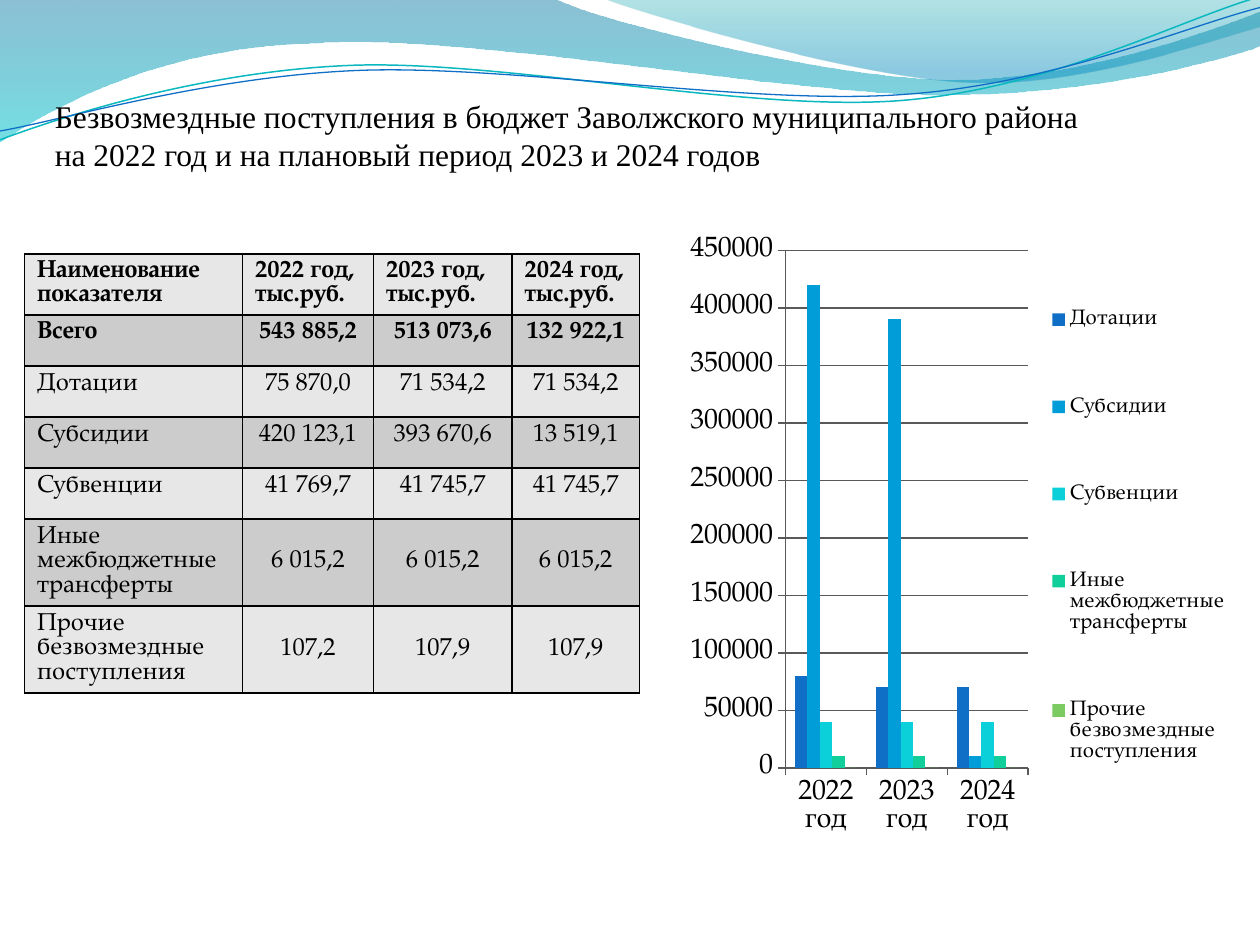
from dataclasses import dataclass
from typing import NamedTuple

from lxml.etree import SubElement
from pptx import Presentation
from pptx.chart.data import CategoryChartData
from pptx.dml.color import RGBColor
from pptx.enum.chart import XL_CHART_TYPE, XL_LEGEND_POSITION, XL_TICK_MARK
from pptx.enum.text import MSO_ANCHOR, MSO_AUTO_SIZE, PP_ALIGN
from pptx.oxml.ns import qn
from pptx.util import Inches, Pt


@dataclass(frozen=True)
class Theme:
    title_font: str = "Times New Roman"
    body_font: str = "TeX Gyre Pagella"
    ink: str = "000000"
    grid: str = "595959"
    bands: tuple = ("E7E7E7", "CCCCCC")
    series: tuple = ("0F6FC6", "009DD9", "0BD0D9", "10CF9B", "7CCA62")
    title_size: int = 18
    cell_size: int = 14
    axis_size: int = 16
    legend_size: int = 12


class Area(NamedTuple):
    left: float
    top: float
    width: float
    height: float


class Stop(NamedTuple):
    position: float
    color: str
    opacity: int


class Wave(NamedTuple):
    start: tuple
    segments: tuple
    stops: tuple = ()
    line: str = ""
    weight: float = 0


class Entry(NamedTuple):
    name: str
    amounts: tuple
    height: float = 4.05
    anchor: MSO_ANCHOR = MSO_ANCHOR.TOP


THEME = Theme()
GRID_COLUMNS, GRID_ROWS = 100, 75
TITLE = ("Безвозмездные поступления в бюджет Заволжского муниципального района",
         "на 2022 год и на плановый период 2023 и 2024 годов")
TITLE_AREA = Area(4.35, 4.4, 89.9, 9.3)
TABLE_AREA = Area(1.95, 20.15, 48.8, 40.2)
CHART_AREA = Area(53.9, 17.8, 44.2, 49.5)
LEGEND_SHARES = Area(0.65, 0.03, 0.35, 0.94)
TABLE_COLUMNS = (17.3, 10.4, 11, 10.1)
HEADER_HEIGHT = 4.85
YEARS = ("2022 год", "2023 год", "2024 год")
HEADER = ("Наименование показателя", "2022 год,\nтыс.руб.",
          "2023 год, тыс.руб.", "2024 год,\nтыс.руб.")
TOTAL = Entry("Всего", (543885.2, 513073.6, 132922.1))
ENTRIES = (
    Entry("Дотации", (75870.0, 71534.2, 71534.2)),
    Entry("Субсидии", (420123.1, 393670.6, 13519.1)),
    Entry("Субвенции", (41769.7, 41745.7, 41745.7)),
    Entry("Иные межбюджетные трансферты", (6015.2, 6015.2, 6015.2), 6.9, MSO_ANCHOR.MIDDLE),
    Entry("Прочие безвозмездные поступления", (107.2, 107.9, 107.9), 6.9, MSO_ANCHOR.MIDDLE),
)
WAVES = (
    Wave((0, 0), (
        (44, -0.1), (47.6, 1.7, 66.4, 6.3, 75.8, 6.3), (85.3, 6.3, 95.8, 2.6, 100, 0.9),
        (100.1, 3.6), (98.3, 4.4, 87, 7.6, 74.6, 7.5), (62.2, 7.5, 38.2, 2.8, 25.7, 3.4),
        (12.9, 3.6, 4.6, 8.3, -0.1, 11.3)),
        (Stop(0, "0074A1", 45), Stop(1, "00C6CF", 55))),
    Wave((47.9, -0.1), (
        (50.9, 1.1, 68.2, 6.2, 76.9, 6.5), (85.6, 6.9, 96.1, 3.2, 100, 2.1), (100, 0)),
        (Stop(0, "00A1A9", 30), Stop(0.8, "008BBF", 45))),
    Wave((0, 11.1), (
        (4.8, 9.3, 15.8, 5.7, 27.7, 5.2), (39.5, 4.7, 59.3, 8.9, 71.3, 8),
        (83.3, 7.1, 93.8, 1.5, 99.8, -0.2)), line="0AB8BF", weight=0.85),
    Wave((0, 10.4), (
        (4.7, 9.6, 16.4, 6.1, 28.3, 5.6), (40.3, 5.1, 59.7, 8.4, 71.7, 7.5),
        (83.6, 6.7, 94.1, 2.1, 100, 0.6)), line="0F6FC6", weight=0.75),
)


def units(count: float) -> int:
    return Inches(count * 10 / GRID_COLUMNS)


def frame(area: Area) -> tuple:
    return tuple(units(value) for value in area)


def rgb(color: str) -> RGBColor:
    return RGBColor.from_string(color)


def style_font(font, name: str, size: float, bold: bool = False) -> None:
    font.name, font.size, font.bold = name, Pt(size), bold
    font.color.rgb = rgb(THEME.ink)


def bend_segments(shape, segments: tuple) -> None:
    corners = iter(list(shape.element.iter(qn("a:lnTo"))))
    for segment in segments:
        first, *others = [next(corners) for _ in segment[::2]]
        if others:
            first.tag = qn("a:cubicBezTo")
        for other in others:
            first.append(other[0])
            other.getparent().remove(other)


def draw_wave(page, wave: Wave) -> None:
    points = [(units(x), units(y)) for segment in wave.segments
              for x, y in zip(segment[::2], segment[1::2])]
    builder = page.shapes.build_freeform(*(units(value) for value in wave.start))
    builder.add_line_segments(points, close=bool(wave.stops))
    shape = builder.convert_to_shape()
    bend_segments(shape, wave.segments)
    shape.shadow.inherit = False
    if not wave.stops:
        shape.fill.background()
        shape.line.color.rgb = rgb(wave.line)
        shape.line.width = Pt(wave.weight)
        return
    shape.line.fill.background()
    shape.fill.gradient()
    shape.fill.gradient_angle = 270
    for target, stop in zip(shape.fill.gradient_stops, wave.stops):
        target.position = stop.position
        target.color.rgb = rgb(stop.color)
    for color, stop in zip(shape.element.iter(qn("a:srgbClr")), wave.stops):
        SubElement(color, qn("a:alpha"), val=str(stop.opacity * 1000))


def draw_title(page) -> None:
    title = page.shapes.title
    title.element.getparent().append(title.element)
    title.left, title.top, title.width, title.height = frame(TITLE_AREA)
    box = title.text_frame
    box.word_wrap, box.auto_size = True, MSO_AUTO_SIZE.NONE
    box.vertical_anchor = MSO_ANCHOR.BOTTOM
    box.margin_left = box.margin_right = box.margin_bottom = 0
    para = box.paragraphs[0]
    para.alignment = PP_ALIGN.LEFT
    for index, words in enumerate(TITLE):
        if index:
            para.add_line_break()
        span = para.add_run()
        span.text = words
        style_font(span.font, THEME.title_font, THEME.title_size)


def fill_cell(cell, text: str, band: str, bold: bool, align: PP_ALIGN, anchor: MSO_ANCHOR) -> None:
    cell.fill.solid()
    cell.fill.fore_color.rgb = rgb(band)
    cell.vertical_anchor = anchor
    box = cell.text_frame
    for index, words in enumerate(text.split("\n")):
        para = box.add_paragraph() if index else box.paragraphs[0]
        para.alignment = align
        span = para.add_run()
        span.text = words
        style_font(span.font, THEME.body_font, THEME.cell_size, bold)
    properties = cell._tc.get_or_add_tcPr()
    for index, side in enumerate(("lnL", "lnR", "lnT", "lnB")):
        border = properties.makeelement(qn(f"a:{side}"), {"w": str(Pt(1))})
        solid = SubElement(border, qn("a:solidFill"))
        SubElement(solid, qn("a:srgbClr"), val=THEME.ink)
        properties.insert(index, border)


def draw_table(page) -> None:
    entries = (TOTAL,) + ENTRIES
    table = page.shapes.add_table(len(entries) + 1, len(HEADER), *frame(TABLE_AREA)).table
    for column, width in zip(table.columns, TABLE_COLUMNS):
        column.width = units(width)
    table.rows[0].height = units(HEADER_HEIGHT)
    for index, text in enumerate(HEADER):
        fill_cell(table.cell(0, index), text, THEME.bands[0], True, PP_ALIGN.LEFT, MSO_ANCHOR.TOP)
    for row, entry in enumerate(entries, 1):
        table.rows[row].height = units(entry.height)
        amounts = [f"{amount:,.1f}".replace(",", " ").replace(".", ",") for amount in entry.amounts]
        for index, text in enumerate([entry.name] + amounts):
            fill_cell(table.cell(row, index), text, THEME.bands[row % 2], entry is TOTAL,
                      PP_ALIGN.CENTER if index else PP_ALIGN.LEFT,
                      entry.anchor if index else MSO_ANCHOR.TOP)


def place_legend(legend) -> None:
    layout = legend._element.get_or_add_layout()
    manual = SubElement(layout, qn("c:manualLayout"))
    for mode in ("xMode", "yMode"):
        SubElement(manual, qn(f"c:{mode}"), val="edge")
    for key, share in zip("xywh", LEGEND_SHARES):
        SubElement(manual, qn(f"c:{key}"), val=str(share))


def draw_chart(page) -> None:
    data = CategoryChartData()
    data.categories = YEARS
    for entry in ENTRIES:
        data.add_series(entry.name, [round(amount, -4) for amount in entry.amounts])
    chart = page.shapes.add_chart(XL_CHART_TYPE.COLUMN_CLUSTERED, *frame(CHART_AREA), data).chart
    chart.has_title = False
    style_font(chart.font, THEME.body_font, THEME.title_size)
    chart.has_legend = True
    chart.legend.position = XL_LEGEND_POSITION.RIGHT
    chart.legend.include_in_layout = False
    style_font(chart.legend.font, THEME.body_font, THEME.legend_size)
    place_legend(chart.legend)
    plot = chart.plots[0]
    plot.gap_width, plot.overlap, plot.vary_by_categories = 150, 0, False
    for series, color in zip(plot.series, THEME.series):
        series.format.fill.solid()
        series.format.fill.fore_color.rgb = rgb(color)
    for axis in (chart.category_axis, chart.value_axis):
        axis.major_tick_mark = XL_TICK_MARK.OUTSIDE
        axis.format.line.color.rgb = rgb(THEME.grid)
        style_font(axis.tick_labels.font, THEME.body_font, THEME.axis_size)
    scale = chart.value_axis
    scale.minimum_scale, scale.maximum_scale, scale.major_unit = 0, 450000, 50000
    scale.major_gridlines.format.line.color.rgb = rgb(THEME.grid)


def main() -> None:
    deck = Presentation()
    deck.slide_width, deck.slide_height = units(GRID_COLUMNS), units(GRID_ROWS)
    page = deck.slides.add_slide(deck.slide_layouts[5])
    for wave in WAVES:
        draw_wave(page, wave)
    draw_title(page)
    draw_table(page)
    draw_chart(page)
    deck.save("out.pptx")


if __name__ == "__main__":
    main()
